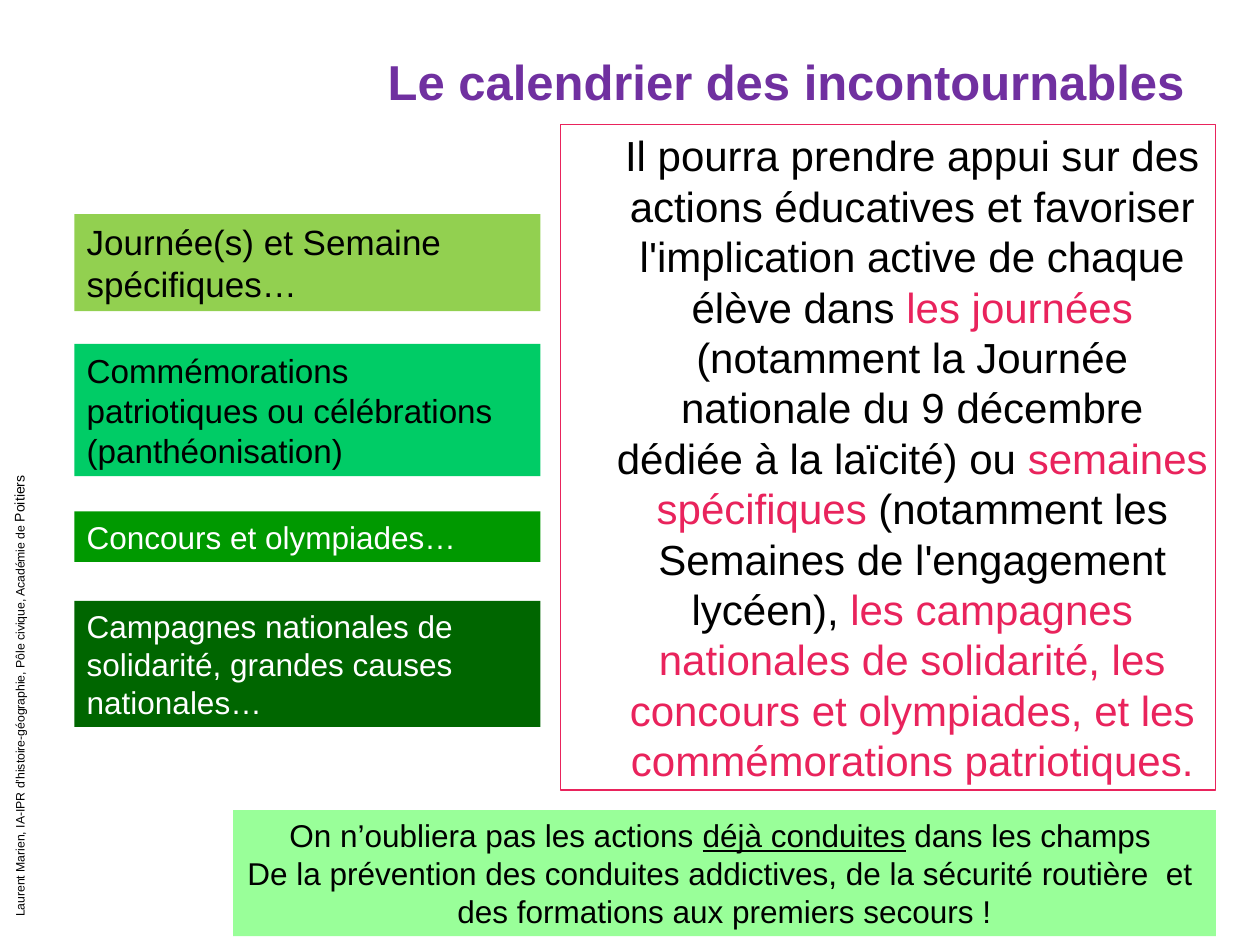
from pptx import Presentation
from pptx.dml.color import RGBColor
from pptx.enum.shapes import MSO_SHAPE
from pptx.enum.text import MSO_ANCHOR, MSO_AUTO_SIZE, PP_ALIGN
from pptx.oxml.ns import qn
from pptx.util import Emu, Pt

PX = 9144
BLACK = RGBColor(0x00, 0x00, 0x00)
WHITE = RGBColor(0xFF, 0xFF, 0xFF)
PURPLE = RGBColor(0x70, 0x30, 0xA0)
PINK = RGBColor(0xE9, 0x23, 0x5C)
LIME = RGBColor(0x92, 0xD0, 0x50)
EMERALD = RGBColor(0x00, 0xCC, 0x66)
GREEN = RGBColor(0x00, 0x99, 0x00)
DARK_GREEN = RGBColor(0x00, 0x66, 0x00)
PALE_GREEN = RGBColor(0x99, 0xFF, 0x99)


def px(length):
    return Emu(length * PX)


def place(shape, box):
    for name, length in zip(("left", "top", "width", "height"), box):
        setattr(shape, name, px(length))


def write_runs(paragraph, runs, alignment, size, color, bold=False):
    paragraph.alignment = alignment
    for text, changes in runs:
        run = paragraph.add_run()
        run.text = text
        values = {"name": "Arial", "size": Pt(size), "bold": bold} | changes
        run.font.color.rgb = values.pop("color", color)
        for name, value in values.items():
            setattr(run.font, name, value)


def format_frame(frame, values):
    for name, value in values.items():
        setattr(frame, name, value)


def add_title(slide, box):
    title = slide.shapes.title
    place(title, box)
    format_frame(title.text_frame, {
        "vertical_anchor": MSO_ANCHOR.MIDDLE, "auto_size": MSO_AUTO_SIZE.NONE})
    write_runs(title.text_frame.paragraphs[0], [("Le calendrier des incontournables", {})],
               PP_ALIGN.RIGHT, 28, PURPLE, True)


def add_quotation(slide, box):
    body = slide.placeholders[1]
    place(body, box)
    body.line.color.rgb = PINK
    body.line.width = Pt(0.75)
    margins = dict.fromkeys(
        ("margin_left", "margin_top", "margin_right", "margin_bottom"), px(4))
    format_frame(body.text_frame, margins | {
        "vertical_anchor": MSO_ANCHOR.TOP, "auto_size": MSO_AUTO_SIZE.NONE})
    paragraph = body.text_frame.paragraphs[0]
    properties = paragraph._p.get_or_add_pPr()
    properties.set("marL", str(px(38)))
    properties.set("indent", "0")
    properties.append(properties.makeelement(qn("a:buNone"), {}))
    paragraph.space_before = Pt(0)
    pink = {"color": PINK}
    write_runs(paragraph, [
        ("Il pourra prendre appui sur des actions éducatives et favoriser "
         "l'implication active de chaque élève dans ", {}),
        ("les journées ", pink),
        ("(notamment la Journée nationale du 9 décembre dédiée à la laïcité) ou ", {}),
        ("semaines spécifiques ", pink),
        ("(notamment les Semaines de l'engagement lycéen), ", {}),
        ("les campagnes nationales de solidarité, les concours et olympiades, "
         "et les commémorations patriotiques.", pink),
    ], PP_ALIGN.CENTER, 24, BLACK)


def add_filled_box(slide, box, fill, paragraphs, alignment, size, color):
    shape = slide.shapes.add_shape(MSO_SHAPE.RECTANGLE, *map(px, box))
    shape.shadow.inherit = False
    shape.fill.solid()
    shape.fill.fore_color.rgb = fill
    shape.line.fill.background()
    frame = shape.text_frame
    format_frame(frame, {"word_wrap": True, "vertical_anchor": MSO_ANCHOR.TOP,
                         "auto_size": MSO_AUTO_SIZE.SHAPE_TO_FIT_TEXT})
    for index, runs in enumerate(paragraphs):
        paragraph = frame.add_paragraph() if index else frame.paragraphs[0]
        write_runs(paragraph, runs, alignment, size, color)


def add_categories(slide, box):
    left, top, width, _ = box
    categories = [
        (0, 77, LIME, "Journée(s) et Semaine spécifiques…", 20, BLACK),
        (103, 105, EMERALD,
         "Commémorations patriotiques ou célébrations (panthéonisation)", 19, BLACK),
        (236, 40, GREEN, "Concours et olympiades…", 18, WHITE),
        (307, 100, DARK_GREEN,
         "Campagnes nationales de solidarité, grandes causes nationales…", 18, WHITE),
    ]
    for offset, height, fill, text, size, color in categories:
        add_filled_box(slide, (left, top + offset, width, height), fill,
                       [[(text, {})]], PP_ALIGN.LEFT, size, color)


def add_credit(slide, box):
    credit = slide.shapes.add_textbox(*map(px, box))
    credit.rotation = 270
    format_frame(credit.text_frame, {
        "word_wrap": True, "auto_size": MSO_AUTO_SIZE.SHAPE_TO_FIT_TEXT})
    write_runs(credit.text_frame.paragraphs[0], [
        ("Laurent Marien, IA-IPR d’histoire-géographie, Pôle civique, Académie de ", {}),
        ("Poitiers", {"size": Pt(8)}),
    ], PP_ALIGN.LEFT, 7, BLACK)


def add_reminder(slide, box):
    add_filled_box(slide, box, PALE_GREEN, [
        [("On n’oubliera pas les actions ", {}),
         ("déjà conduites", {"underline": True}),
         (" dans les champs ", {})],
        [("De la prévention des conduites addictives, de la sécurité routière  et  "
          "des formations aux premiers secours !", {})],
    ], PP_ALIGN.CENTER, 18, BLACK)


def main():
    presentation = Presentation()
    presentation.slide_width = px(1000)
    presentation.slide_height = px(750)
    slide = presentation.slides.add_slide(presentation.slide_layouts[1])
    add_title(slide, (50, 30, 900, 69))
    add_quotation(slide, (445, 99, 520, 528))
    add_categories(slide, (59, 170, 370, 407))
    add_credit(slide, (-260, 450, 551, 24))
    add_reminder(slide, (185, 643, 780, 100))
    presentation.save("out.pptx")


if __name__ == "__main__":
    main()
